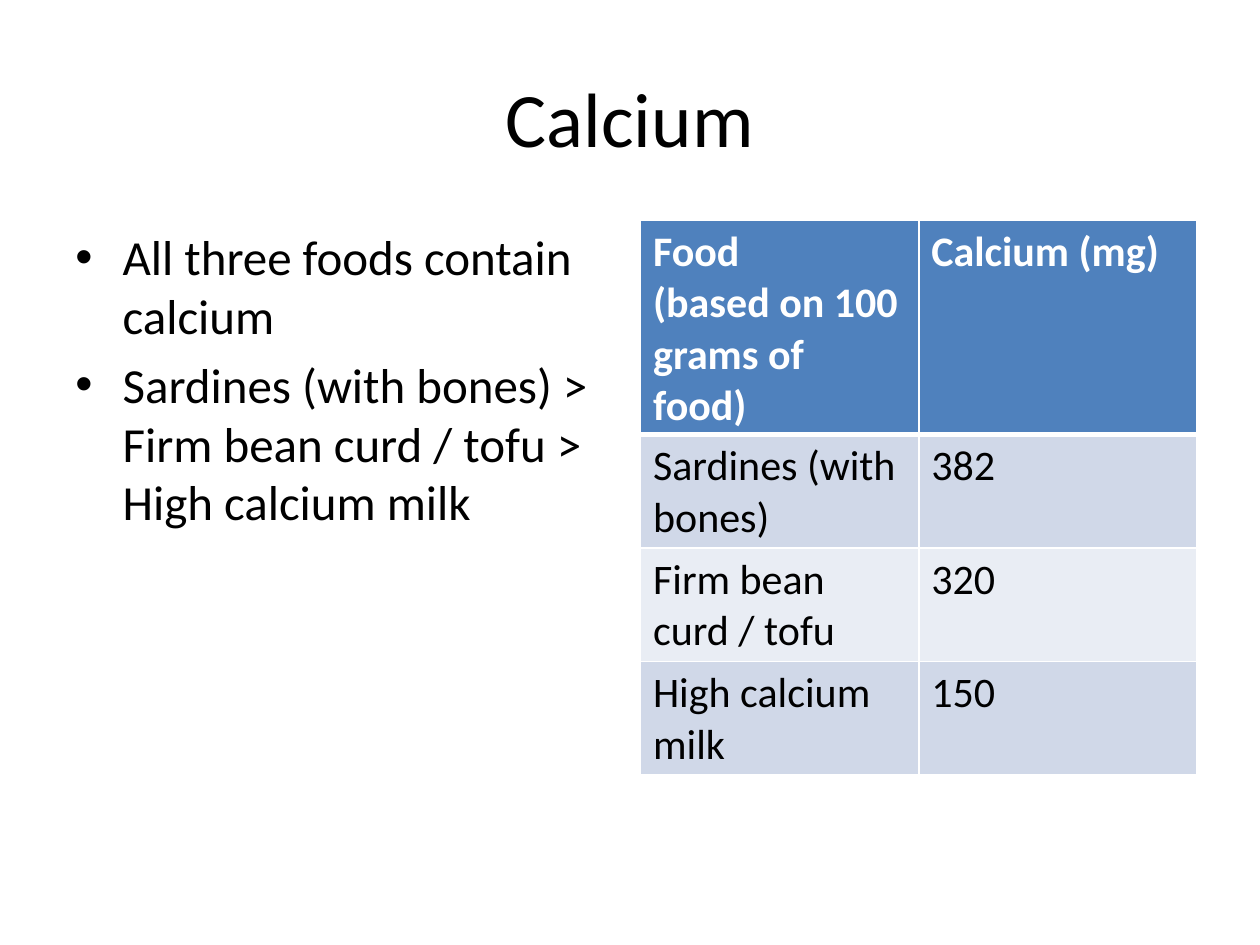
from lxml import etree
from pptx import Presentation
from pptx.dml.color import RGBColor
from pptx.enum.text import MSO_ANCHOR, PP_ALIGN
from pptx.oxml.ns import qn
from pptx.util import Pt

# Content
TITLE = "Calcium"
BULLETS = [
    "All three foods contain calcium",
    "Sardines (with bones) > Firm bean curd / tofu > High calcium milk",
]
FOOD_ROWS = [
    ("Food \n(based on 100 grams of food)", "Calcium (mg)"),
    ("Sardines (with bones)", "382"),
    ("Firm bean curd / tofu", "320"),
    ("High calcium milk", "150"),
]

# Style
FONT = "Calibri"
BLACK = RGBColor(0x00, 0x00, 0x00)
WHITE = RGBColor(0xFF, 0xFF, 0xFF)
HEADER_BLUE = RGBColor(0x4F, 0x81, 0xBD)
BAND_COLORS = [RGBColor(0xE9, 0xED, 0xF4), RGBColor(0xD0, 0xD8, 0xE8)]
LEFT, CENTER = PP_ALIGN.LEFT, PP_ALIGN.CENTER
TOP, MIDDLE = MSO_ANCHOR.TOP, MSO_ANCHOR.MIDDLE

# Layout in points
SLIDE_WIDTH, SLIDE_HEIGHT = 720, 540
MARGIN = 36
TITLE_TOP, TITLE_HEIGHT = 21.6, 90
CONTENT_TOP = 126
COLUMN_WIDTH, BODY_HEIGHT = 318, 356.4
TABLE_LEFT = SLIDE_WIDTH - MARGIN - COLUMN_WIDTH
TABLE_HEIGHT, ROW_HEIGHT = 316.8, 29.2
BULLET_INDENT = 27


def write_text(frame, texts, size, color=BLACK, bold=False, align=LEFT,
               space_before=0, bullet=False):
    frame.word_wrap = True
    for index, text in enumerate(texts):
        paragraph = frame.paragraphs[0] if index == 0 else frame.add_paragraph()
        paragraph.text = text
        paragraph.alignment = align
        paragraph.space_before = Pt(space_before)
        for run in paragraph.runs:
            run.font.name = FONT
            run.font.size = Pt(size)
            run.font.bold = bold
            run.font.color.rgb = color
        if bullet:
            properties = paragraph._p.get_or_add_pPr()
            properties.set("marL", str(Pt(BULLET_INDENT)))
            properties.set("indent", str(-Pt(BULLET_INDENT)))
            etree.SubElement(properties, qn("a:buFont"), typeface="Arial")
            etree.SubElement(properties, qn("a:buChar"), char="•")


def add_text(slide, left, top, width, height, texts, anchor=TOP, **text_format):
    box = slide.shapes.add_textbox(Pt(left), Pt(top), Pt(width), Pt(height))
    box.text_frame.vertical_anchor = anchor
    write_text(box.text_frame, texts, **text_format)


def set_borders(cell, widths):
    """Draw white borders; they must come before the fill in the XML."""
    properties = cell._tc.get_or_add_tcPr()
    for position, (side, width) in enumerate(widths.items()):
        line = etree.Element(qn(f"a:{side}"), w=str(Pt(width)))
        fill = etree.SubElement(line, qn("a:solidFill"))
        etree.SubElement(fill, qn("a:srgbClr"), val=str(WHITE))
        properties.insert(position, line)


def add_food_table(slide):
    frame = slide.shapes.add_table(
        len(FOOD_ROWS), len(FOOD_ROWS[0]), Pt(TABLE_LEFT), Pt(CONTENT_TOP),
        Pt(COLUMN_WIDTH), Pt(TABLE_HEIGHT))
    table = frame.table
    for row_index, values in enumerate(FOOD_ROWS):
        header = row_index == 0
        table.rows[row_index].height = Pt(ROW_HEIGHT)
        for column_index, text in enumerate(values):
            cell = table.cell(row_index, column_index)
            write_text(cell.text_frame, [text], size=24, bold=header,
                       color=WHITE if header else BLACK)
            cell.fill.solid()
            cell.fill.fore_color.rgb = (
                HEADER_BLUE if header else BAND_COLORS[row_index % 2])
            set_borders(cell, {"lnL": 1, "lnR": 1,
                               "lnT": 3 if row_index == 1 else 1,
                               "lnB": 3 if header else 1})
    frame.height = Pt(TABLE_HEIGHT)


def main():
    presentation = Presentation()
    presentation.slide_width = Pt(SLIDE_WIDTH)
    presentation.slide_height = Pt(SLIDE_HEIGHT)
    slide = presentation.slides.add_slide(presentation.slide_layouts[6])

    # Title
    add_text(slide, MARGIN, TITLE_TOP, SLIDE_WIDTH - 2 * MARGIN, TITLE_HEIGHT,
             [TITLE], anchor=MIDDLE, size=44, align=CENTER)
    # Bullets on the left, table on the right
    add_text(slide, MARGIN, CONTENT_TOP, COLUMN_WIDTH, BODY_HEIGHT,
             BULLETS, size=28, space_before=5.6, bullet=True)
    add_food_table(slide)

    presentation.save("out.pptx")


if __name__ == "__main__":
    main()
